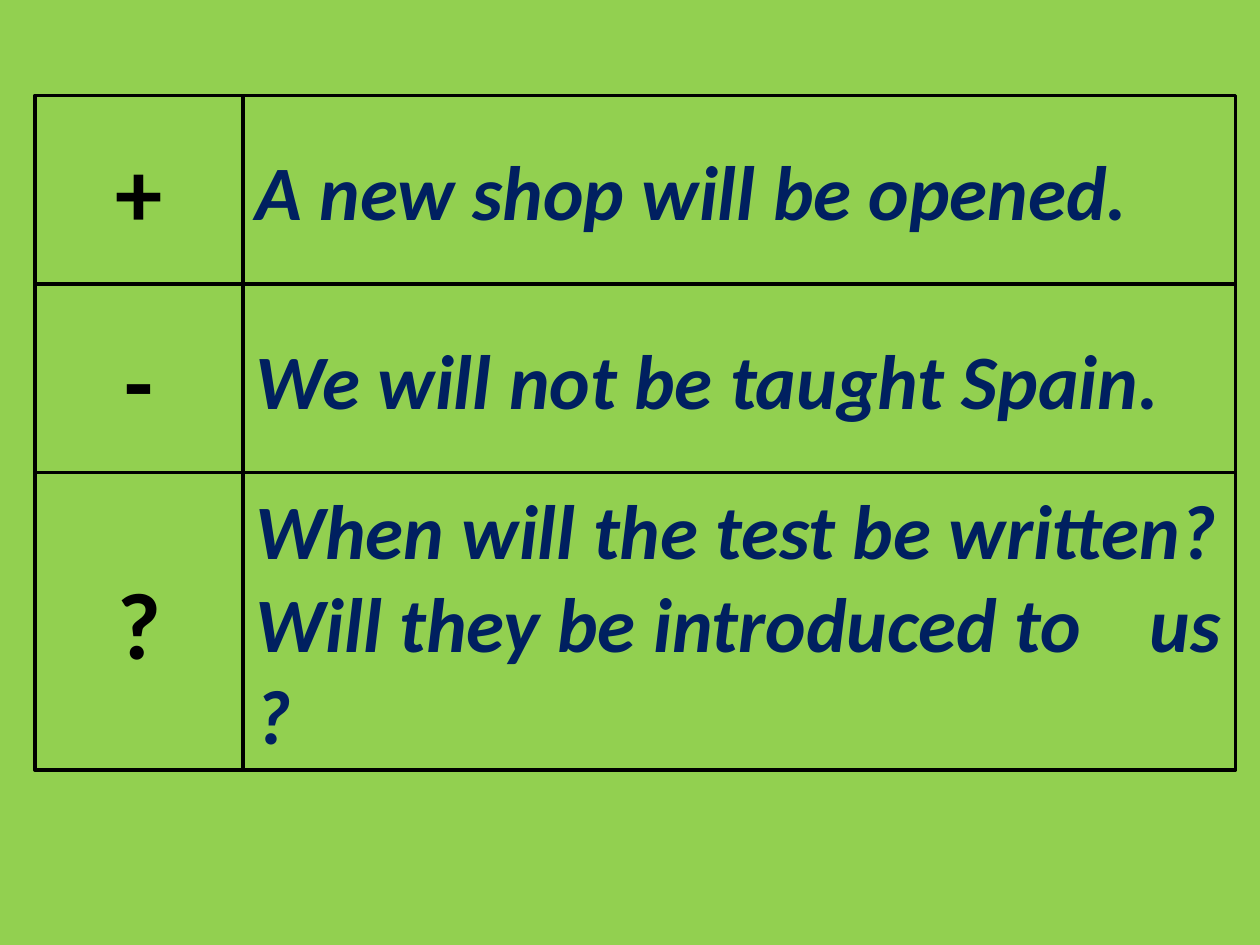
"""Build a slide of passive voice examples in a ruled grid of boxes."""
import pptx
import pptx.dml.color
import pptx.enum.shapes
import pptx.enum.text
import pptx.oxml
import pptx.oxml.ns
import pptx.util

Pt = pptx.util.Pt
ALIGN = pptx.enum.text.PP_ALIGN
COLORS = {"background": "92D050", "line": "000000", "sign": "000000", "example": "002060"}
FORMATS = {
    "sign": {"size": Pt(54), "bold": True, "name": "Calibri"},
    "example": {"size": Pt(44), "bold": True, "italic": True, "name": "Calibri"},
}
ALIGNMENTS = {"sign": ALIGN.CENTER, "example": ALIGN.LEFT}
LEFT, TOP = 20, 54.5
SIGN_WIDTH, EXAMPLE_WIDTH = 119, 567
TAB_STOP = 511
ROWS = [
    (107.75, "+", ["A new shop will be opened."]),
    (107.75, "-", ["We will not be taught Spain."]),
    (170, "?", ["When will the test be written?", "Will they be introduced to\tus ?"]),
]


def rgb(key):
    """Return the named colour."""
    return pptx.dml.color.RGBColor.from_string(COLORS[key])


def add_tab_stop(p, position):
    """Give the paragraph one left tab stop."""
    tabs = pptx.oxml.parse_xml(
        f'<a:tabLst {pptx.oxml.ns.nsdecls("a")}><a:tab pos="{Pt(position)}" algn="l"/></a:tabLst>'
    )
    p._p.get_or_add_pPr().append(tabs)


def add_paragraph(p, text, kind):
    """Write one formatted line into the paragraph."""
    p.alignment = ALIGNMENTS[kind]
    if "\t" in text:
        add_tab_stop(p, TAB_STOP)
    r = p.add_run()
    r.text = text
    for name, value in FORMATS[kind].items():
        setattr(r.font, name, value)
    r.font.color.rgb = rgb(kind)


def add_box(slide, left, top, width, height, lines, kind):
    """Add an outlined box holding the lines."""
    sp = slide.shapes.add_shape(
        pptx.enum.shapes.MSO_SHAPE.RECTANGLE, Pt(left), Pt(top), Pt(width), Pt(height)
    )
    sp.shadow.inherit = False
    sp.fill.background()
    sp.line.color.rgb = rgb("line")
    sp.line.width = Pt(2)
    tf = sp.text_frame
    tf.word_wrap = True
    tf.vertical_anchor = pptx.enum.text.MSO_ANCHOR.MIDDLE
    for i, text in enumerate(lines):
        p = tf.add_paragraph() if i else tf.paragraphs[0]
        add_paragraph(p, text, kind)


def main():
    """Build and save the slide."""
    prs = pptx.Presentation()
    prs.slide_width, prs.slide_height = Pt(720), Pt(540)
    slide = prs.slides.add_slide(prs.slide_layouts[6])
    slide.background.fill.solid()
    slide.background.fill.fore_color.rgb = rgb("background")
    top = TOP
    for height, sign, examples in ROWS:
        add_box(slide, LEFT, top, SIGN_WIDTH, height, [sign], "sign")
        add_box(slide, LEFT + SIGN_WIDTH, top, EXAMPLE_WIDTH, height, examples, "example")
        top += height
    prs.save("out.pptx")


if __name__ == "__main__":
    main()
